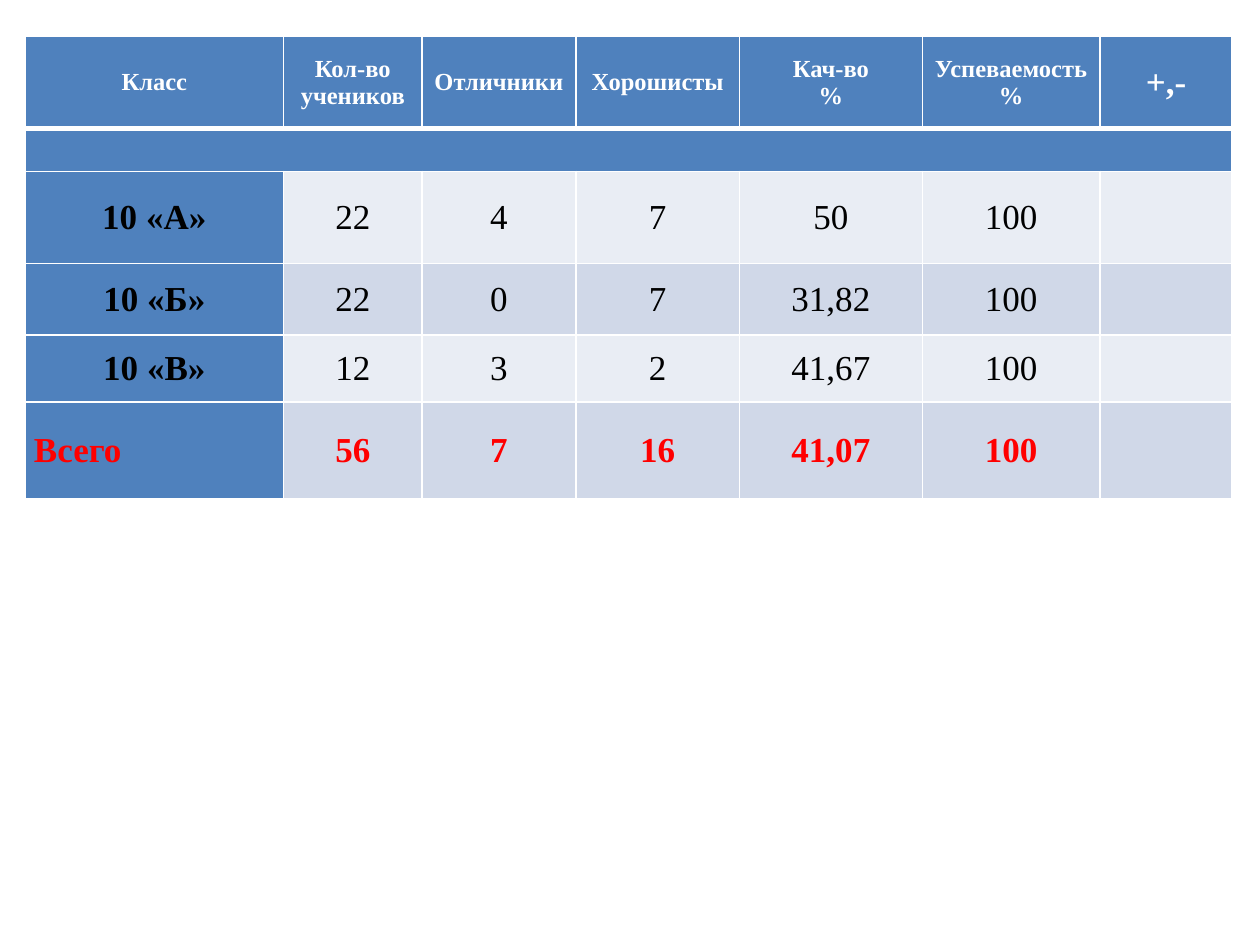
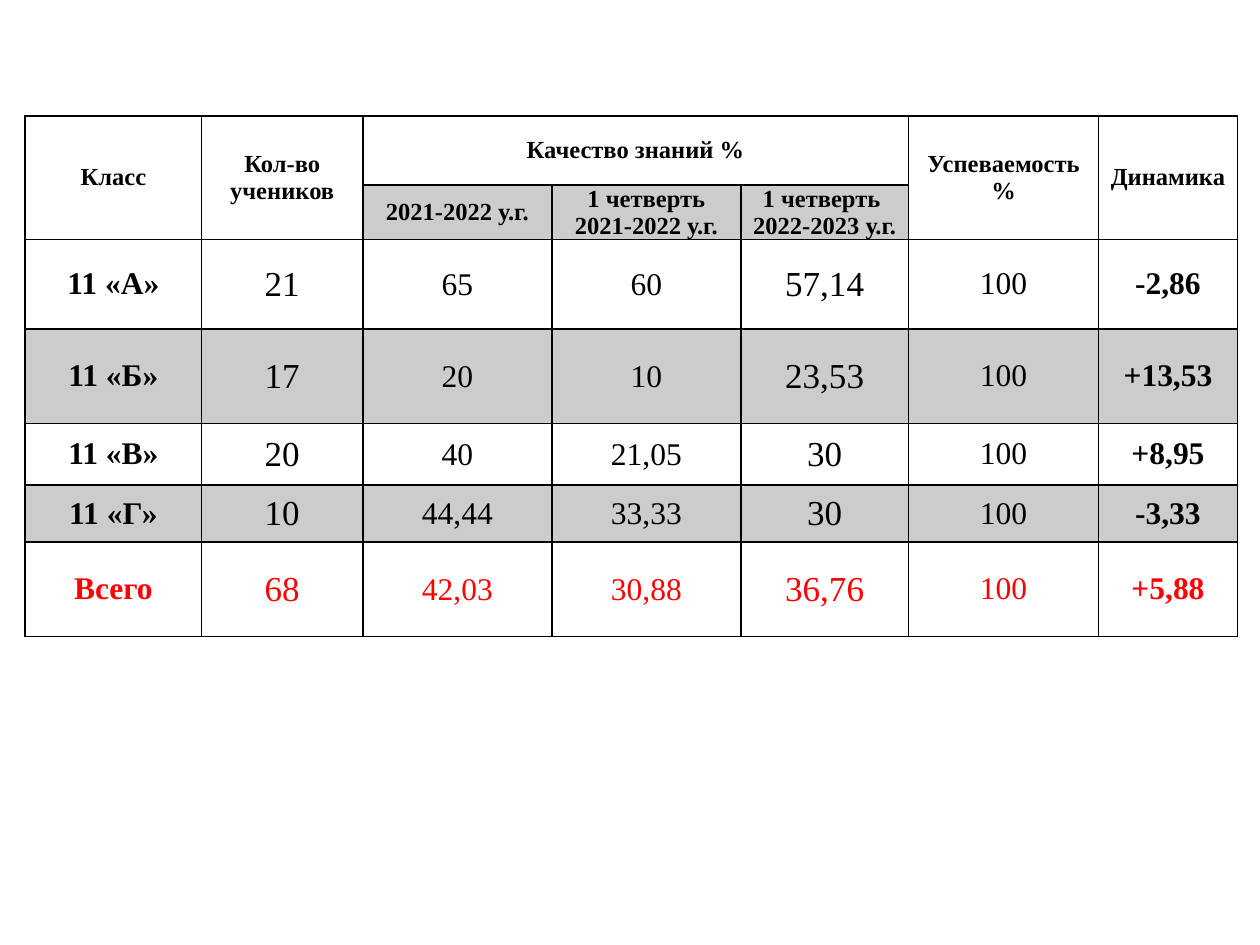
"""Build two slides with tables of class results for grades 10 and 11."""
from lxml import etree
from pptx import Presentation
from pptx import util as u
from pptx.dml.color import RGBColor
from pptx.enum import text
from pptx.oxml import ns

BLACK = RGBColor(0x00, 0x00, 0x00)
WHITE = RGBColor(0xFF, 0xFF, 0xFF)
RED = RGBColor(0xFF, 0x00, 0x00)
BLUE = RGBColor(0x4F, 0x81, 0xBD)
BANDS = RGBColor(0xE9, 0xED, 0xF4), RGBColor(0xD0, 0xD8, 0xE8)
FONT = "Times New Roman"
GRID_COLUMNS, GRID_ROWS = 100, 75
COUNT_COLUMNS = range(1, 5)


class Deck:
    """Hold the shared style and the current slide."""

    def __init__(self):
        self.prs = Presentation()
        self.prs.slide_width, self.prs.slide_height = u.Inches(10), u.Inches(7.5)
        self.slide = None

    def across(self, columns):
        """Turn grid columns into a length."""
        return round(self.prs.slide_width * columns / GRID_COLUMNS)

    def down(self, rows):
        """Turn grid rows into a length."""
        return round(self.prs.slide_height * rows / GRID_ROWS)

    def add_slide(self):
        """Start a blank slide."""
        self.slide = self.prs.slides.add_slide(self.prs.slide_layouts[6])

    def table(self, left, top, widths, heights, border):
        """Add a plain ruled table with the given column widths and row heights."""
        grid = self.slide.shapes.add_table(
            len(heights), len(widths), self.across(left), self.down(top),
            self.across(sum(widths)), self.down(sum(heights))).table
        grid.first_row = grid.horz_banding = False
        for column, width in zip(grid.columns, widths):
            column.width = self.across(width)
        for row, height in zip(grid.rows, heights):
            row.height = self.down(height)
        for cell in grid.iter_cells():
            cell.margin_top = cell.margin_bottom = 0
            for side in "LRTB":
                self.border(cell, side, border)
        return grid

    def border(self, cell, side, color, points=1):
        """Draw one side of a cell."""
        props = cell._tc.get_or_add_tcPr()
        line = etree.SubElement(props, ns.qn(f"a:ln{side}"), w=str(u.Pt(points)))
        fill = etree.SubElement(line, ns.qn("a:solidFill"))
        etree.SubElement(fill, ns.qn("a:srgbClr"), val=str(color))

    def fill(self, cell, color, percent=100):
        """Fill a cell, leave it clear when there is no color."""
        if color is None:
            cell.fill.background()
            return
        cell.fill.solid()
        cell.fill.fore_color.rgb = color
        if percent < 100:
            tint = cell._tc.tcPr.find(ns.qn("a:solidFill")).find(ns.qn("a:srgbClr"))
            etree.SubElement(tint, ns.qn("a:alpha"), val=str(percent * 1000))

    def label(self, cell, words, size, color, bold, side=0.07, top=0,
              align=text.PP_ALIGN.CENTER):
        """Put styled words into a cell."""
        cell.vertical_anchor = text.MSO_ANCHOR.MIDDLE
        cell.margin_left = cell.margin_right = u.Inches(side)
        cell.margin_top = u.Inches(top)
        cell.text_frame.text = words
        for paragraph in cell.text_frame.paragraphs:
            paragraph.alignment = align
            for run in paragraph.runs:
                run.font.name, run.font.size = FONT, u.Pt(size)
                run.font.color.rgb, run.font.bold = color, bold

    def value(self, cell, column, words, size, color, bold, **layout):
        """Label a body cell, with tight margins in the count columns."""
        if column in COUNT_COLUMNS:
            layout.update(side=0.01, top=0.01)
        self.label(cell, words, size, color, bold, **layout)


def grade_ten(deck):
    """Build the blue table of grade 10."""
    headings = ["Класс", "Кол-во учеников", "Отличники", "Хорошисты",
                "Кач-во\n%", "Успеваемость\n%", "+,-"]
    results = [["10 «А»", "22", "4", "7", "50", "100"],
               ["10 «Б»", "22", "0", "7", "31,82", "100"],
               ["10 «В»", "12", "3", "2", "41,67", "100"],
               ["Всего", "56", "7", "16", "41,07", "100"]]
    deck.add_slide()
    grid = deck.table(2, 2.9, [20.5, 11, 12.2, 13, 14.5, 14.1, 10.5],
                      [7.3, 3.4, 7.3, 5.7, 5.3, 7.7], WHITE)
    for column, heading in enumerate(headings):
        head, strip = grid.cell(0, column), grid.cell(1, column)
        for cell, side in ((head, "B"), (strip, "T")):
            cell._tc.tcPr.find(ns.qn(f"a:ln{side}")).set("w", str(u.Pt(3)))
            deck.fill(cell, BLUE)
        deck.label(head, heading, 20 if heading == "+,-" else 14, WHITE, True)
    grid.cell(1, 0).merge(grid.cell(1, len(headings) - 1))
    for row, result in enumerate(results):
        total = result is results[-1]
        for column in range(len(headings)):
            deck.fill(grid.cell(row + 2, column), BANDS[row % 2] if column else BLUE)
        for column, words in enumerate(result):
            left = total and column == 0
            deck.value(grid.cell(row + 2, column), column, words, 20,
                       RED if total else BLACK, total or column == 0,
                       align=text.PP_ALIGN.LEFT if left else text.PP_ALIGN.CENTER)


def grade_eleven(deck):
    """Build the ruled table of grade 11."""
    headings = {0: "Класс", 1: "Кол-во учеников", 2: "Качество знаний %",
                5: "Успеваемость %", 6: "Динамика"}
    periods = ["2021-2022 у.г.", "1 четверть\v2021-2022 у.г.",
               "1 четверть \v2022-2023 у.г."]
    results = [["11 «А»", "21", "65", "60", "57,14", "100", "-2,86"],
               ["11 «Б»", "17", "20", "10", "23,53", "100", "+13,53"],
               ["11 «В»", "20", "40", "21,05", "30", "100", "+8,95"],
               ["11 «Г»", "10", "44,44", "33,33", "30", "100", "-3,33"],
               ["Всего", "68", "42,03", "30,88", "36,76", "100", "+5,88"]]
    large_columns, bold_columns = (1, 4), (0, 6)
    deck.add_slide()
    grid = deck.table(2, 9.2, [14, 12.8, 15, 15, 13.3, 15.1, 11],
                      [5.5, 4.3, 7.1, 7.5, 4.9, 4.5, 7.5], BLACK)
    for cell in grid.iter_cells():
        deck.fill(cell, None)
    for column, heading in headings.items():
        cell = grid.cell(0, column)
        cell.merge(grid.cell(0, 4) if column == 2 else grid.cell(1, column))
        deck.label(cell, heading, 14, BLACK, True)
    for column, period in enumerate(periods, 2):
        deck.fill(grid.cell(1, column), BLACK, 20)
        deck.label(grid.cell(1, column), period, 14, BLACK, True)
    for row, result in enumerate(results):
        for column, words in enumerate(result):
            cell = grid.cell(row + 2, column)
            if row % 2:
                deck.fill(cell, BLACK, 20)
            deck.value(cell, column, words, 20 if column in large_columns else 18,
                       RED if result is results[-1] else BLACK,
                       column in bold_columns)


def main():
    """Build both slides and save them."""
    deck = Deck()
    grade_ten(deck)
    grade_eleven(deck)
    deck.prs.save("out.pptx")


if __name__ == "__main__":
    main()
